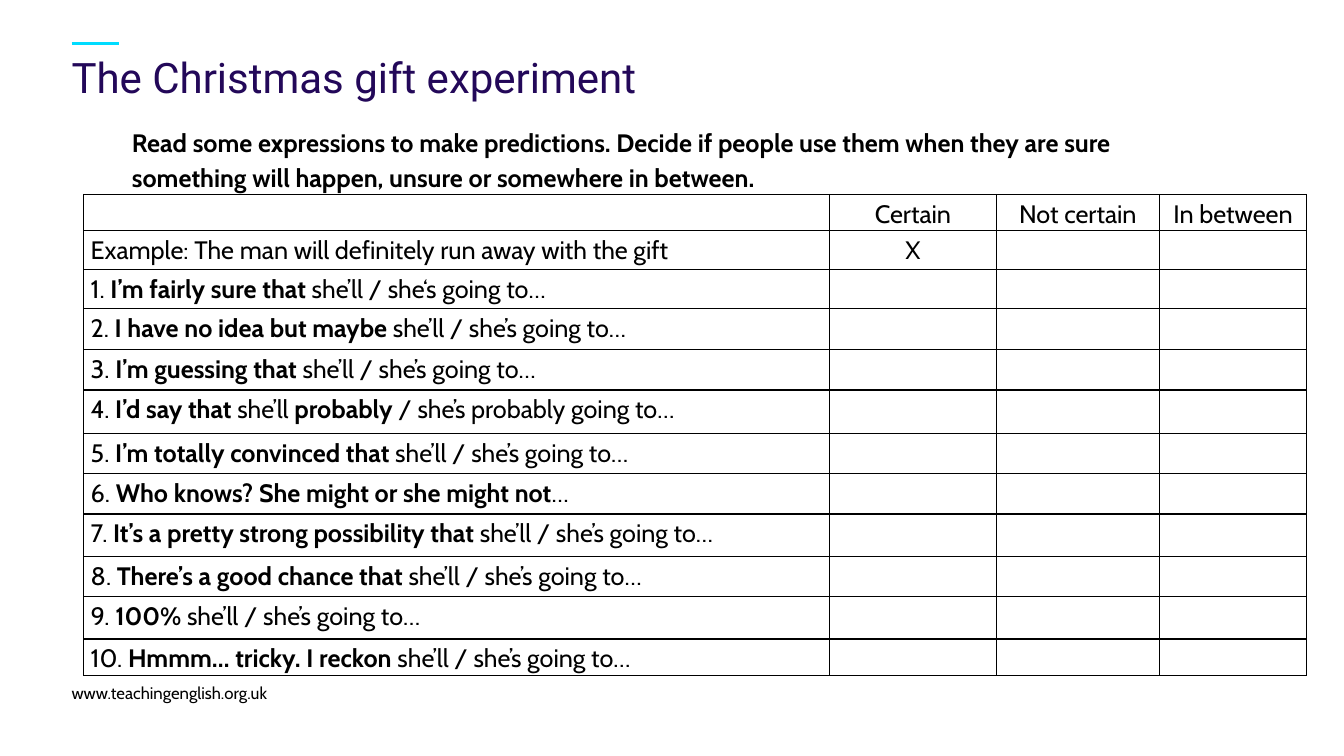
from lxml import etree
from pptx import Presentation
from pptx import util as u
from pptx.dml.color import RGBColor
from pptx.enum import text
from pptx.oxml import ns

COLORS = {"title": "230859", "accent": "00DCFF", "ink": "000000"}
BODY = {"name": "Cabin", "size": u.Pt(18)}
NO_MARGINS = {"margin_left": 0, "margin_right": 0, "margin_top": 0, "margin_bottom": 0}

HEADINGS = ["", "Certain", "Not certain", "In between"]
EXAMPLE = "Example: The man will definitely run away with the gift"
GOING_TO = "she’ll / she’s going to…"
# Asterisks enclose the bold words.
EXPRESSIONS = [
    "*I’m fairly sure that *she’ll / she‘s going to…",
    "*I have no idea but maybe *" + GOING_TO,
    "*I’m guessing that *" + GOING_TO,
    "*I’d say that *she’ll *probably */ she’s probably going to…",
    "*I’m totally convinced that *" + GOING_TO,
    "*Who knows? She might or she might not*…",
    "*It’s a pretty strong possibility that *" + GOING_TO,
    "*There’s a good chance that *" + GOING_TO,
    "*100% *" + GOING_TO,
    "*Hmmm… tricky. I reckon *" + GOING_TO,
]
COLUMN_WIDTHS = [7.4, 1.65, 1.62, 1.46]
ROW_HEIGHTS = [0.36, 0.38, 0.39, 0.41, 0.4, 0.43, 0.4, 0.4, 0.42, 0.4, 0.42, 0.36]


def apply(target, **values):
    for name, value in values.items():
        setattr(target, name, value)


def inches(box):
    return [u.Inches(length) for length in box]


def write(paragraph, marked, color="ink", **font):
    """Add runs to a paragraph, bold between asterisks."""
    for index, words in enumerate(marked.split("*")):
        if words:
            run = paragraph.add_run()
            run.text = words
            apply(run.font, **{**BODY, "bold": index % 2 == 1, **font})
            run.font.color.rgb = RGBColor.from_string(COLORS[color])


def add_title(slide, box):
    left, top, width, height = inches(box)
    accent_top = top - u.Inches(0.12)
    accent = slide.shapes.add_connector(1, left, accent_top, left + u.Inches(0.47), accent_top)
    accent.line.color.rgb = RGBColor.from_string(COLORS["accent"])
    accent.line.width = u.Pt(2.4)
    etree.SubElement(accent._element.spPr, ns.qn("a:effectLst"))

    title = slide.shapes.title
    apply(title, left=left, top=top, width=width, height=height)
    apply(title.text_frame, **NO_MARGINS, vertical_anchor=text.MSO_ANCHOR.TOP,
          auto_size=text.MSO_AUTO_SIZE.NONE)
    heading = title.text_frame.paragraphs[0]
    apply(heading, alignment=text.PP_ALIGN.LEFT, line_spacing=u.Pt(33))
    write(heading, "The Christmas gift experiment", "title", name="Roboto", size=u.Pt(30))


def add_text(slide, box, marked, frame_format, line_spacing=1.0, **font):
    frame = slide.shapes.add_textbox(*inches(box)).text_frame
    apply(frame, word_wrap=True, **frame_format)
    frame.paragraphs[0].line_spacing = line_spacing
    write(frame.paragraphs[0], marked, **font)


def add_borders(cell):
    properties = cell._tc.get_or_add_tcPr()
    for side in ("lnL", "lnR", "lnT", "lnB"):
        border = etree.SubElement(properties, ns.qn(f"a:{side}"), w=str(u.Pt(1)))
        fill = etree.SubElement(border, ns.qn("a:solidFill"))
        etree.SubElement(fill, ns.qn("a:srgbClr"), val=COLORS["ink"])


def add_prediction_table(slide, box):
    numbered = [f"{number}. {words}" for number, words in enumerate(EXPRESSIONS, 1)]
    rows = [HEADINGS, [EXAMPLE, "X", "", ""]] + [[words, "", "", ""] for words in numbered]
    table = slide.shapes.add_table(len(rows), len(HEADINGS), *inches(box)).table
    apply(table, first_row=False, horz_banding=False)
    for column, width in zip(table.columns, COLUMN_WIDTHS):
        column.width = u.Inches(width)
    for row, height, entries in zip(table.rows, ROW_HEIGHTS, rows):
        row.height = u.Inches(height)
        for index, (cell, entry) in enumerate(zip(row.cells, entries)):
            apply(cell, margin_left=u.Inches(0.07), margin_right=u.Inches(0.07),
                  margin_top=0, margin_bottom=0)
            add_borders(cell)
            cell.fill.background()
            paragraph = cell.text_frame.paragraphs[0]
            alignment = text.PP_ALIGN.CENTER if index else text.PP_ALIGN.LEFT
            apply(paragraph, alignment=alignment, line_spacing=1.15)
            write(paragraph, entry)


def main():
    deck = Presentation()
    apply(deck, slide_width=u.Inches(13.33), slide_height=u.Inches(7.5))
    slide = deck.slides.add_slide(deck.slide_layouts[5])
    add_title(slide, (0.71, 0.55, 11.97, 0.87))
    add_text(slide, (0.71, 6.77, 11.42, 0.2), "www.teachingenglish.org.uk",
             {**NO_MARGINS, "vertical_anchor": text.MSO_ANCHOR.BOTTOM}, size=u.Pt(12))
    add_text(slide, (1.21, 1.17, 10.92, 0.76),
             "*Read some expressions to make predictions. Decide if people use them when "
             "they are sure something will happen, unsure or somewhere in between.*",
             {"vertical_anchor": text.MSO_ANCHOR.TOP}, line_spacing=1.15)
    add_prediction_table(slide, (0.83, 1.93, 12.12, 4.75))
    deck.save("out.pptx")


if __name__ == "__main__":
    main()
